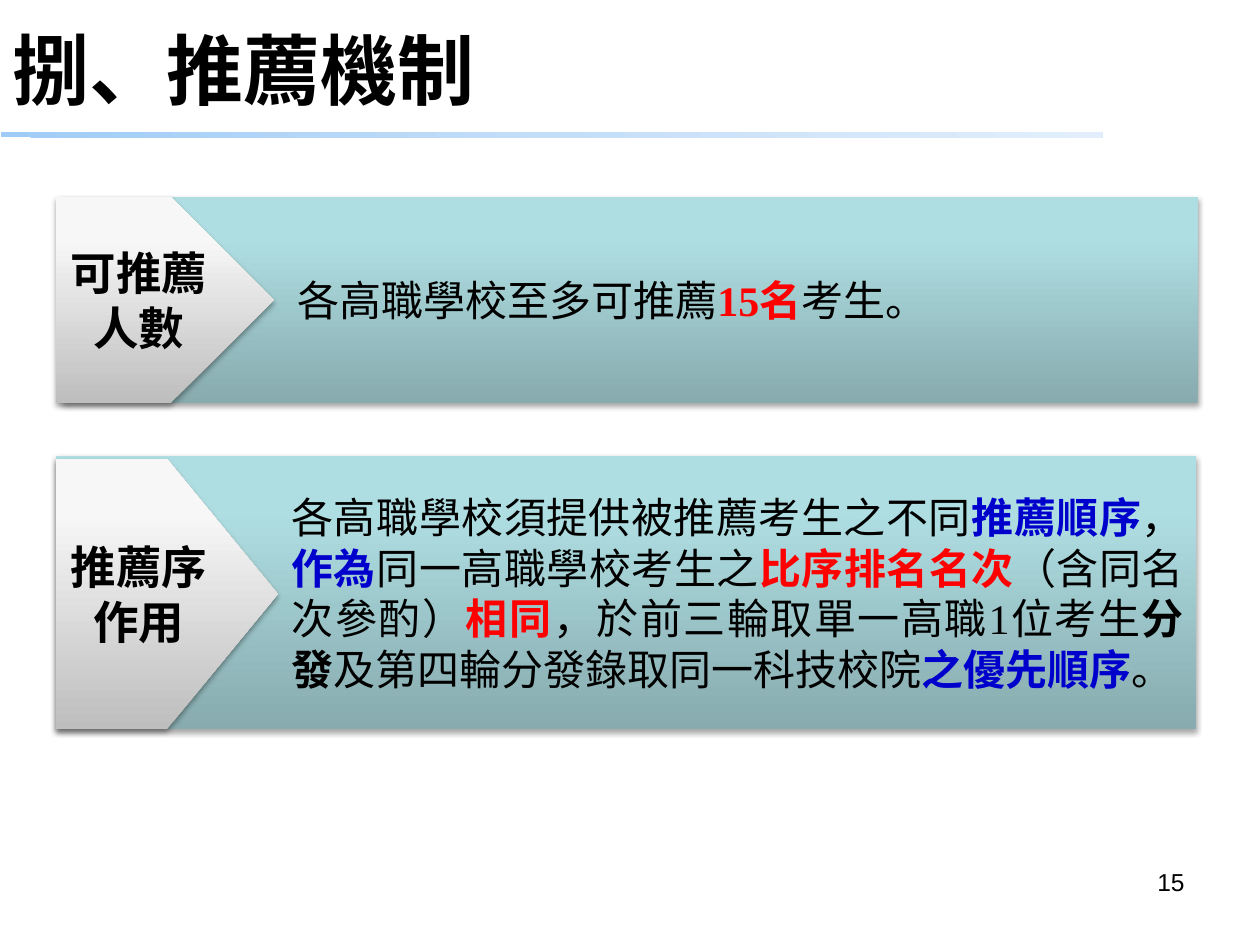
from lxml import etree
from pptx import Presentation
from pptx.dml.color import RGBColor
from pptx.enum.shapes import MSO_SHAPE as Shape
from pptx.enum.text import MSO_ANCHOR as Anchor, PP_ALIGN as Align
from pptx.oxml import parse_xml
from pptx.oxml.ns import nsdecls, qn
from pptx.util import Pt

BLACK, RED, BLUE = "000000", "FF0000", "0000CC"
SERIF = "Times New Roman"
RULE_STOPS = [(0, "9FCCF6"), (50, "C4DEF8"), (100, "E2EEFB")]
BAND_STOPS = [(0, "87ABAE"), (80, "AFDEE2"), (100, "AFE0E4")]
LABEL_STOPS = [(0, "BEBEBE"), (80, "F7F7F7"), (100, "F8F8F8")]
TEXT_INDENT = 127.6


def color(hex_string):
    return RGBColor.from_string(hex_string)


def add_runs(paragraph, runs, size, font=SERIF):
    """Add (text, colour, bold) runs to the paragraph."""
    for text, hex_string, bold in runs:
        run = paragraph.add_run()
        run.text = text
        run.font.name = font
        run.font.size = Pt(size)
        run.font.bold = bold
        run.font.color.rgb = color(hex_string)


def add_text(slide, box, runs, size, font=SERIF, align=Align.LEFT, anchor=Anchor.TOP):
    frame = slide.shapes.add_textbox(*map(Pt, box)).text_frame
    frame.word_wrap = True
    frame.vertical_anchor = anchor
    frame.paragraphs[0].alignment = align
    add_runs(frame.paragraphs[0], runs, size, font)


def set_gradient(shape, stops, angle):
    """Fill with any number of stops; the angle runs clockwise."""
    shape.fill.gradient()
    gradient = shape._element.spPr.find(qn("a:gradFill"))
    stop_list = gradient.find(qn("a:gsLst"))
    for stop in list(stop_list):
        stop_list.remove(stop)
    for position, hex_string in stops:
        stop = etree.SubElement(stop_list, qn("a:gs"), pos=str(position * 1000))
        etree.SubElement(stop, qn("a:srgbClr"), val=hex_string)
    gradient.find(qn("a:lin")).set("ang", str(angle * 60000))


def add_shadow(shape):
    effects = shape._element.spPr.find(qn("a:effectLst"))
    effects.append(parse_xml(
        f'<a:outerShdw {nsdecls("a")} blurRad="{Pt(3.1)}" dist="{Pt(1.8)}" '
        'dir="5400000" rotWithShape="0"><a:srgbClr val="000000">'
        '<a:alpha val="35000"/></a:srgbClr></a:outerShdw>'))


def add_gradient_shape(slide, kind, box, stops, angle):
    shape = slide.shapes.add_shape(kind, *map(Pt, box))
    shape.shadow.inherit = False
    shape.line.fill.background()
    set_gradient(shape, stops, angle)
    return shape


def add_plate(slide, box, stops, runs, size, align, point=0.5):
    """Add a shadowed pentagon arrow with centred-height text."""
    plate = add_gradient_shape(slide, Shape.PENTAGON, box, stops, 270)
    plate.adjustments[0] = point
    add_shadow(plate)
    frame = plate.text_frame
    frame.word_wrap = True
    frame.vertical_anchor = Anchor.MIDDLE
    paragraph = frame.paragraphs[0]
    paragraph.alignment = align
    add_runs(paragraph, runs, size)
    return paragraph


def add_band(slide, box, runs, align, margin, indent):
    paragraph = add_plate(slide, box, BAND_STOPS, runs, 24, align, point=0)
    properties = paragraph._p.get_or_add_pPr()
    properties.set("marL", str(Pt(margin)))
    properties.set("indent", str(Pt(indent)))


def add_label(slide, box, text):
    add_plate(slide, box, LABEL_STOPS, [(text, BLACK, True)], 26, Align.CENTER)


def main():
    presentation = Presentation()
    presentation.slide_width, presentation.slide_height = Pt(720), Pt(540)
    slide = presentation.slides.add_slide(presentation.slide_layouts[6])

    add_gradient_shape(slide, Shape.RECTANGLE, (0.7, 75.6, 629.3, 2.9), RULE_STOPS, 315)
    add_text(slide, (0, 14.4, 648, 49.7), [("捌、推薦機制", BLACK, True)], 44,
             anchor=Anchor.MIDDLE)
    add_text(slide, (516.2, 491.8, 167.8, 37.4), [("15", BLACK, False)], 14,
             font="Arial", align=Align.RIGHT)

    quota = [
        ("各高職學校至多可推薦", BLACK, False),
        ("15名", RED, True),
        ("考生。", BLACK, False),
    ]
    ranking = [
        ("各高職學校須提供被推薦考生之不同", BLACK, False),
        ("推薦順序", BLUE, True),
        ("，", BLACK, False),
        ("作為", BLUE, True),
        ("同一高職學校考生之", BLACK, False),
        ("比序排名名次", RED, True),
        ("（含同名次參酌）", BLACK, False),
        ("相同", RED, True),
        ("，於前三輪取單一高職1位考生", BLACK, False),
        ("分發", BLACK, True),
        ("及第四輪分發錄取同一科技校院", BLACK, False),
        ("之優先順序", BLUE, True),
        ("。", BLACK, False),
    ]
    add_band(slide, (35.2, 112.4, 649.2, 118), quota, Align.LEFT, 0, TEXT_INDENT)
    add_band(slide, (31.9, 260.6, 651.6, 156.2), ranking, Align.JUSTIFY, TEXT_INDENT, 0)
    add_label(slide, (31.9, 112.4, 124.6, 118), "可推薦人數")
    add_label(slide, (31.9, 262.1, 126.9, 154.7), "推薦序作用")

    presentation.save("out.pptx")


if __name__ == "__main__":
    main()
